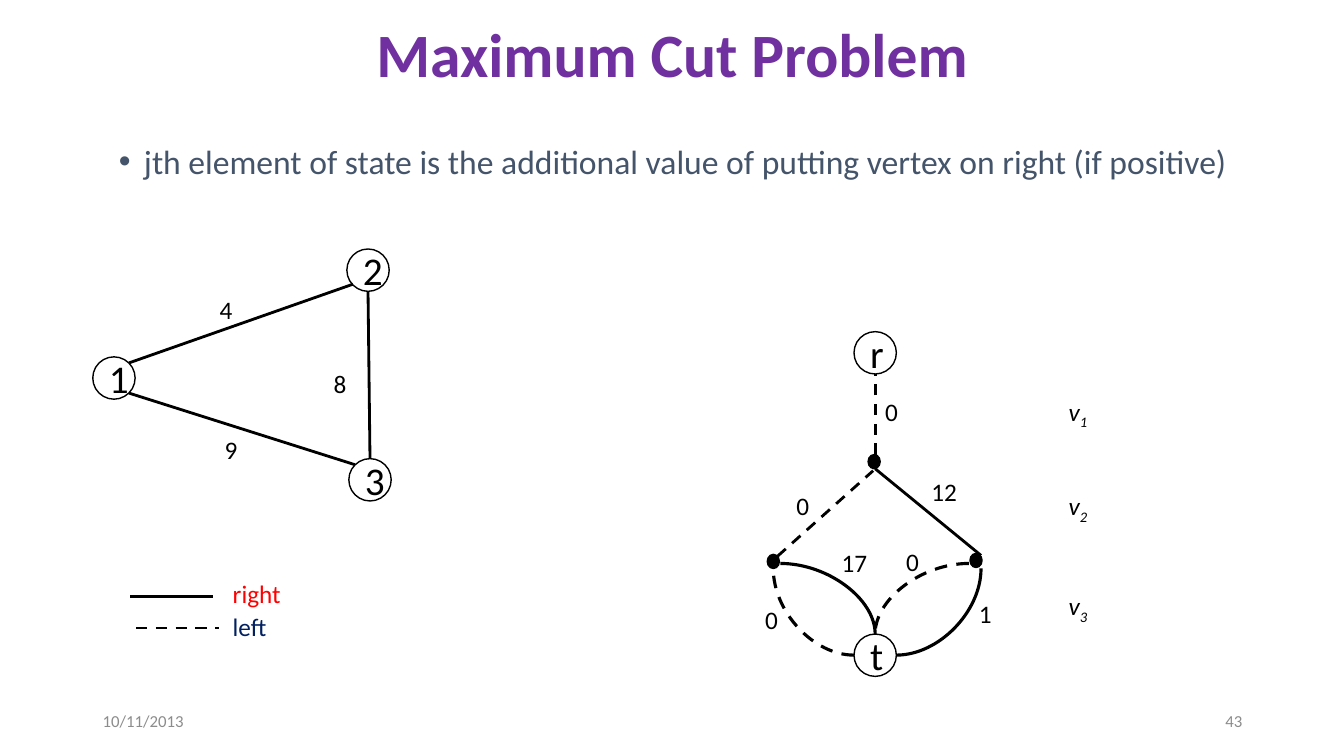
from lxml import etree
from pptx import Presentation
from pptx.dml.color import RGBColor
from pptx.enum.dml import MSO_LINE
from pptx.enum.shapes import MSO_CONNECTOR, MSO_SHAPE
from pptx.enum.text import MSO_ANCHOR, MSO_AUTO_SIZE, PP_ALIGN
from pptx.oxml.ns import qn
from pptx.util import Inches, Pt

OVAL = MSO_SHAPE.OVAL
STRAIGHT, CURVE = MSO_CONNECTOR.STRAIGHT, MSO_CONNECTOR.CURVE
DASH = MSO_LINE.DASH
LEFT, CENTER, RIGHT = PP_ALIGN.LEFT, PP_ALIGN.CENTER, PP_ALIGN.RIGHT
TOP, MIDDLE = MSO_ANCHOR.TOP, MSO_ANCHOR.MIDDLE
FIT_SHAPE = MSO_AUTO_SIZE.SHAPE_TO_FIT_TEXT

THEME = {
    "font": "Calibri",
    "title": "7030A0", "body": "44546A", "footer": "8C8C8C",
    "ink": "000000", "right": "FF0000", "left": "002060",
    "title_size": 44, "body_size": 24, "node_size": 28,
    "label_size": 18, "footer_size": 12,
    "outline": 1, "edge": 2, "arc": 2.25,
}

# Content: lengths in inches
TITLE = "Maximum Cut Problem"
STATE_RULE = ("jth element of state is the additional value of putting "
              "vertex on right (if positive)")
DATE, PAGE = "10/11/2013", "43"

NODE_SIZE = 0.42
NODES = [  # text, left, top
    ("1", 0.92, 3.54), ("3", 3.46, 4.55), ("2", 3.44, 2.47),
    ("r", 8.47, 3.29), ("t", 8.47, 6.29),
]
STATE_WIDTH, STATE_HEIGHT = 0.12, 0.14
STATES = [(8.61, 4.51), (7.61, 5.5), (9.62, 5.49)]

EDGES = [  # start, end, dashed
    ((3.5, 2.82), (1.28, 3.6), False),
    ((3.52, 4.61), (1.28, 3.9), False),
    ((3.67, 4.55), (3.65, 2.89), False),
    ((8.68, 4.51), (8.68, 3.71), True),
    ((7.71, 5.52), (8.66, 4.67), True),
    ((9.73, 5.51), (8.68, 4.65), False),
    # legend
    ((2.11, 5.92), (1.29, 5.92), False),
    ((1.35, 6.23), (2.17, 6.23), True),
]
ARCS = [  # leave horizontally, arrive vertically
    ((7.74, 5.59), (8.68, 6.29), False),
    ((9.61, 5.59), (8.68, 6.29), True),
    ((8.47, 6.5), (7.67, 5.64), True),
    ((8.89, 6.5), (9.73, 5.64), False),
]
LABEL_HEIGHT = 0.4
LABELS = [  # text, left, top, width, colour
    ("8", 3.21, 3.61, 0.33, "ink"), ("4", 2.08, 2.87, 0.33, "ink"),
    ("9", 2.13, 4.26, 0.33, "ink"), ("0", 8.68, 3.88, 0.33, "ink"),
    ("0", 7.8, 4.82, 0.33, "ink"), ("12", 9.14, 4.68, 0.46, "ink"),
    ("0", 7.49, 5.95, 0.33, "ink"), ("17", 8.25, 5.38, 0.46, "ink"),
    ("0", 8.89, 5.37, 0.33, "ink"), ("1", 9.61, 5.89, 0.33, "ink"),
    ("right", 2.21, 5.69, 0.68, "right"), ("left", 2.21, 6.02, 0.55, "left"),
]
LAYER_LEFT = 10.5
LAYERS = [("1", 3.88), ("2", 4.82), ("3", 5.81)]  # subscript of v, top


def color(name):
    return RGBColor.from_string(THEME[name])


def style(run, role_size, role_color):
    run.font.name = THEME["font"]
    run.font.size = Pt(THEME[role_size])
    run.font.color.rgb = color(role_color)


def add_text(slide, text, box, role_size, role_color, align=LEFT, anchor=TOP, wrap=True):
    frame = slide.shapes.add_textbox(*map(Inches, box)).text_frame
    frame.word_wrap = wrap
    frame.vertical_anchor = anchor
    if not wrap:
        frame.auto_size = FIT_SHAPE
    frame.text = text
    paragraph = frame.paragraphs[0]
    paragraph.alignment = align
    style(paragraph.runs[0], role_size, role_color)
    return paragraph


def add_circle(slide, box, filled):
    circle = slide.shapes.add_shape(OVAL, *map(Inches, box))
    circle.shadow.inherit = False
    if filled:
        circle.fill.solid()
        circle.fill.fore_color.rgb = color("ink")
    else:
        circle.fill.background()
    circle.line.color.rgb = color("ink")
    circle.line.width = Pt(THEME["outline"])
    return circle


def add_link(slide, kind, start, end, dashed, weight):
    link = slide.shapes.add_connector(kind, *map(Inches, start + end))
    link.line.color.rgb = color("ink")
    link.line.width = Pt(THEME[weight])
    if dashed:
        link.line.dash_style = DASH
    properties = link._element.spPr
    etree.SubElement(properties, qn("a:effectLst"))
    if kind == CURVE:
        properties.find(qn("a:prstGeom")).set("prst", "curvedConnector2")


def main():
    prs = Presentation()
    prs.slide_width, prs.slide_height = Inches(13.33), Inches(7.5)
    slide = prs.slides.add_slide(prs.slide_layouts[6])

    # Title and footer
    title = add_text(slide, TITLE, (0.92, 0.12, 11.5, 0.91),
                     "title_size", "title", CENTER, MIDDLE)
    title.line_spacing = 0.9
    title.runs[0].font.bold = True
    for text, left, align in [(DATE, 0.92, LEFT), (PAGE, 9.42, RIGHT)]:
        add_text(slide, text, (left, 6.95, 3, 0.4),
                 "footer_size", "footer", align, MIDDLE)

    # Bulleted rule
    rule = add_text(slide, STATE_RULE, (1.08, 1.39, 11.5, 5.53), "body_size", "body")
    rule.line_spacing = 0.9
    rule.space_before = Pt(10)
    bullet = rule._p.get_or_add_pPr()
    bullet.set("marL", str(Inches(0.25)))
    bullet.set("indent", str(-Inches(0.25)))
    etree.SubElement(bullet, qn("a:buFont")).set("typeface", "Arial")
    etree.SubElement(bullet, qn("a:buChar")).set("char", "•")

    # Graph, decision diagram and legend lines
    for edge in EDGES:
        add_link(slide, STRAIGHT, *edge, "edge")
    for arc in ARCS:
        add_link(slide, CURVE, *arc, "arc")

    # Nodes and state dots
    for text, left, top in NODES:
        frame = add_circle(slide, (left, top, NODE_SIZE, NODE_SIZE), False).text_frame
        frame.text = text
        frame.vertical_anchor = MIDDLE
        frame.paragraphs[0].alignment = CENTER
        style(frame.paragraphs[0].runs[0], "node_size", "ink")
    for left, top in STATES:
        add_circle(slide, (left, top, STATE_WIDTH, STATE_HEIGHT), True)

    # Edge values, legend words and layer names
    for text, left, top, width, ink in LABELS:
        add_text(slide, text, (left, top, width, LABEL_HEIGHT),
                 "label_size", ink, wrap=False)
    for index, top in LAYERS:
        layer = add_text(slide, "v", (LAYER_LEFT, top, 0.4, LABEL_HEIGHT),
                         "label_size", "ink", wrap=False)
        subscript = layer.add_run()
        subscript.text = index
        style(subscript, "label_size", "ink")
        subscript.font._element.set("baseline", "-25000")
        for run in layer.runs:
            run.font.italic = True

    prs.save("out.pptx")


if __name__ == "__main__":
    main()
